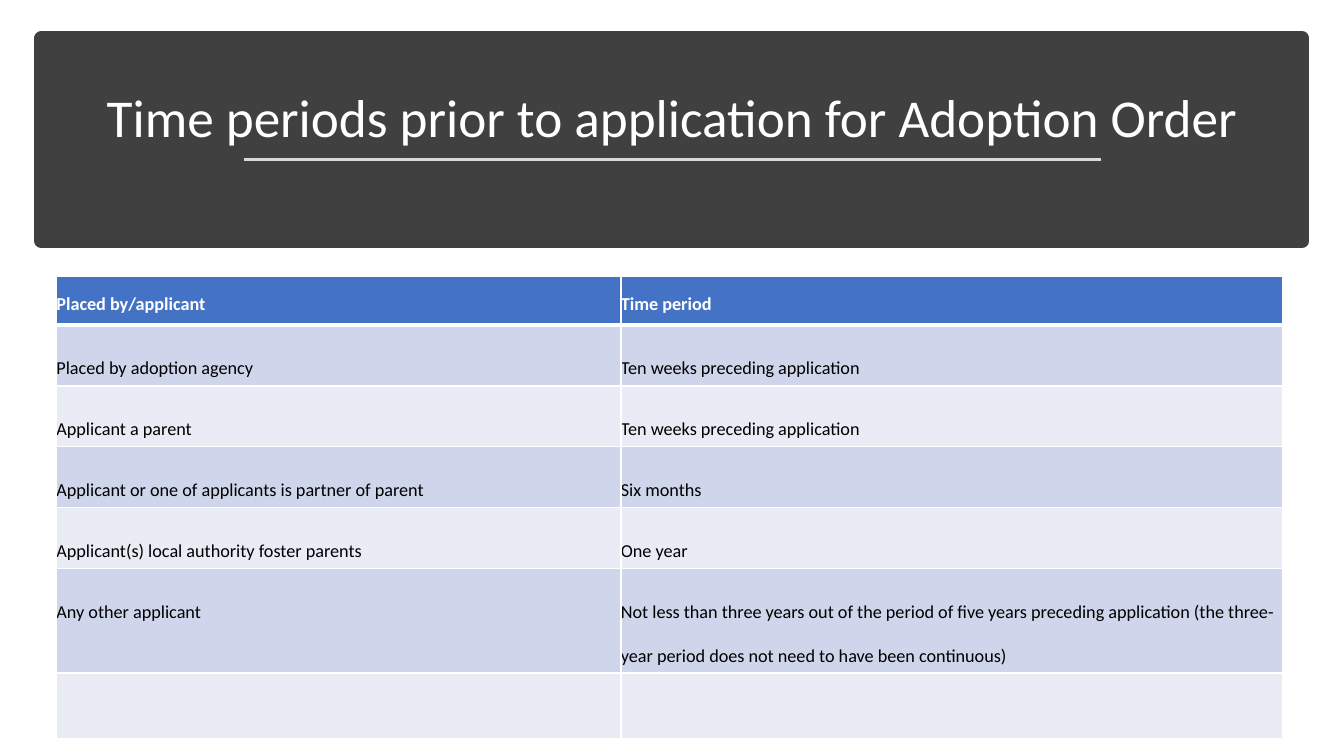
from dataclasses import dataclass

from lxml.etree import SubElement as Sub
from pptx import Presentation
from pptx.dml.color import RGBColor as RGB
from pptx.enum.shapes import MSO_CONNECTOR as Link, MSO_SHAPE as Form
from pptx.enum.text import MSO_ANCHOR as Anchor, PP_ALIGN as Align
from pptx.oxml import parse_xml
from pptx.oxml.ns import nsdecls, qn
from pptx.util import Pt

FONT = "Calibri"
WHITE = "FFFFFF"
DARK = "404040"
COLS = (403.2, 472.4)


@dataclass
class Look:
    """Text setting shared by the cells of a row."""
    ink: str
    bold: bool
    lead: float
    gap: float
    top: float
    base: float


@dataclass
class Row:
    texts: tuple[str, str]
    high: float
    fill: str
    look: Look


HEAD = Look(WHITE, True, 1.5, 6, 4.3, 7.2)
BODY = Look("000000", False, 2, 3, 7.2, 5)
BANDS = ("CFD5EA", "E9EBF5")
PERIODS = [
    ("Placed by adoption agency", "Ten weeks preceding application", 41),
    ("Applicant a parent", "Ten weeks preceding application", 41),
    ("Applicant or one of applicants is partner of parent", "Six months", 41),
    ("Applicant(s) local authority foster parents", "One year", 41),
    ("Any other applicant",
     "Not less than three years out of the period of five years preceding "
     "application (the three-year period does not need to have been continuous)", 71.3),
    ("", "", 46.8),
]
ROWS = [Row(("Placed by/applicant", "Time period"), 34.6, "4472C4", HEAD)] + [
    Row((left, right), high, BANDS[i % 2], BODY)
    for i, (left, right, high) in enumerate(PERIODS)
]


def tint(code: str) -> RGB:
    return RGB.from_string(code)


def style(para, size: float, ink: str, bold: bool = False) -> None:
    for run in para.runs:
        font = run.font
        font.name, font.size, font.bold = FONT, Pt(size), bold
        font.color.rgb = tint(ink)


def edge(cell, sides: dict[str, float]) -> None:
    """Put white borders, in schema order, ahead of the cell fill."""
    props = cell._tc.get_or_add_tcPr()
    for i, (side, wide) in enumerate(sides.items()):
        line = parse_xml(
            f'<a:{side} {nsdecls("a")} w="{Pt(wide)}"><a:solidFill>'
            f'<a:srgbClr val="{WHITE}"/></a:solidFill></a:{side}>')
        props.insert(i, line)


def write(cell, text: str, row: Row) -> None:
    look = row.look
    cell.fill.solid()
    cell.fill.fore_color.rgb = tint(row.fill)
    cell.margin_left = cell.margin_right = 0
    cell.margin_top, cell.margin_bottom = Pt(look.top), Pt(look.base)
    if text:
        cell.text_frame.text = text
        para = cell.text_frame.paragraphs[0]
        para.line_spacing = look.lead
        para.space_before = para.space_after = Pt(look.gap)
        style(para, 13, look.ink, look.bold)


def banner(slide) -> None:
    # Dark panel
    panel = slide.shapes.add_shape(Form.RECTANGLE, Pt(29.5), Pt(27.4), Pt(900.7), Pt(144.6))
    panel.shadow.inherit = False
    panel.fill.solid()
    panel.fill.fore_color.rgb = tint(DARK)
    panel.line.color.rgb = tint(DARK)
    panel.line.width = Pt(10)

    # Title
    title = slide.shapes.add_textbox(Pt(41.8), Pt(36.7), Pt(877), Pt(73.4))
    frame = title.text_frame
    frame.word_wrap = True
    frame.vertical_anchor = Anchor.BOTTOM
    frame.text = "Time periods prior to application for Adoption Order"
    para = frame.paragraphs[0]
    para.alignment = Align.CENTER
    para.line_spacing = 0.9
    style(para, 38, WHITE)

    # Rule under the title
    rule = slide.shapes.add_connector(Link.STRAIGHT, Pt(174.2), Pt(113.8), Pt(786.2), Pt(113.8))
    rule.line.color.rgb = tint("D9D9D9")
    rule.line.width = Pt(1.75)
    Sub(rule._element.spPr, qn("a:effectLst"))


def table(slide) -> None:
    high = sum(row.high for row in ROWS)
    grid = slide.shapes.add_table(
        len(ROWS), len(COLS), Pt(40.3), Pt(197.3), Pt(sum(COLS)), Pt(high)).table
    for col, wide in zip(grid.columns, COLS):
        col.width = Pt(wide)
    for r, row in enumerate(ROWS):
        grid.rows[r].height = Pt(row.high)
        for c, text in enumerate(row.texts):
            cell = grid.cell(r, c)
            write(cell, text, row)
            edge(cell, {"lnL": 1, "lnR": 1,
                        "lnT": 3 if r == 1 else 1, "lnB": 3 if r == 0 else 1})


def main() -> None:
    deck = Presentation()
    deck.slide_width, deck.slide_height = Pt(960), Pt(540)
    slide = deck.slides.add_slide(deck.slide_layouts[6])
    banner(slide)
    table(slide)
    deck.save("out.pptx")


if __name__ == "__main__":
    main()
